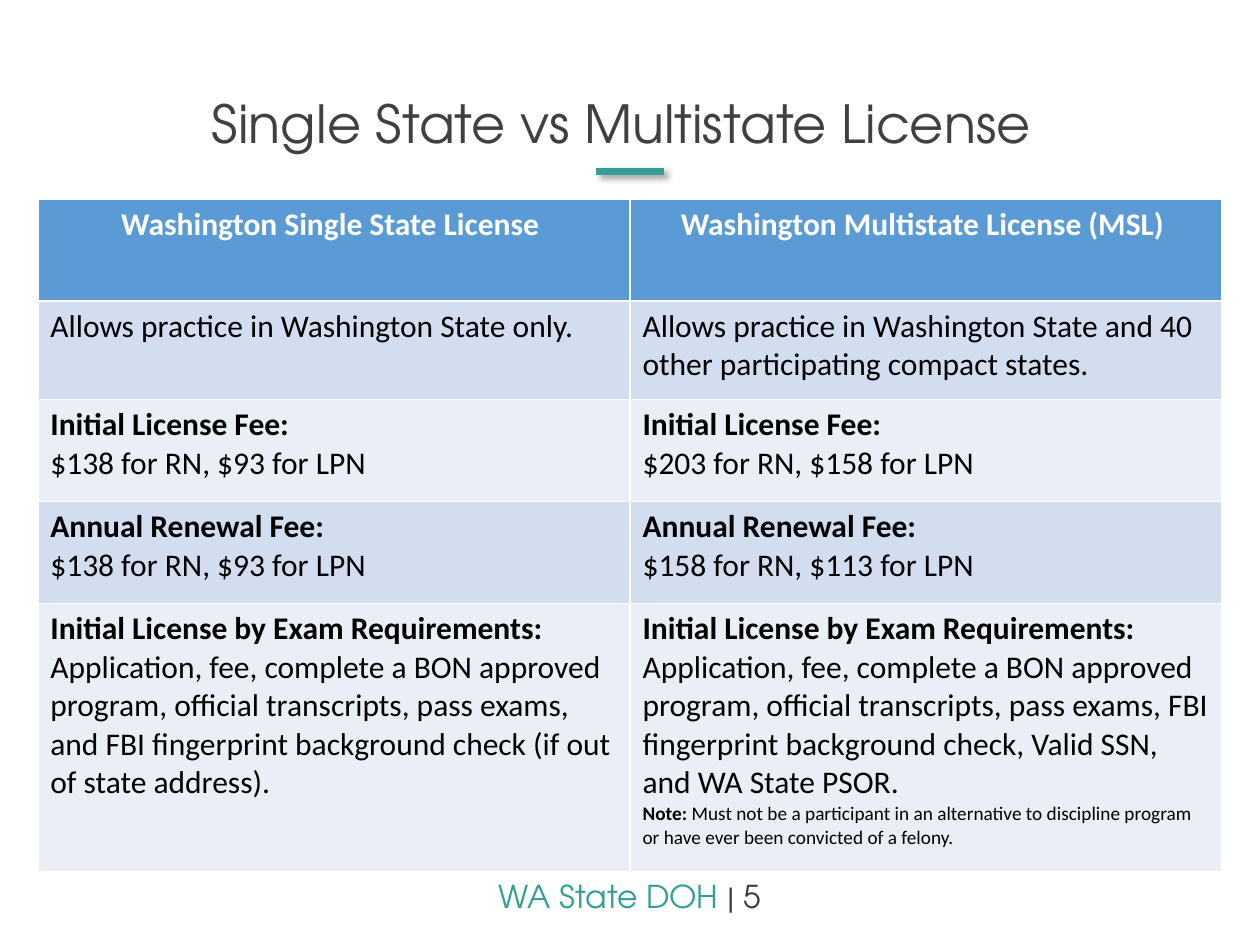
"""Build the slide that compares single state and multistate licenses."""
from lxml import etree
from pptx import Presentation
from pptx import util as u
from pptx.dml.color import RGBColor
from pptx.enum import shapes, text
from pptx.oxml import ns

WIDE, HIGH = u.Inches(10), u.Inches(7.5)
TEAL = RGBColor(0x34, 0x9D, 0x96)
GREY = RGBColor(0x40, 0x40, 0x40)
BLUE = RGBColor(0x5B, 0x9B, 0xD5)
BANDS = RGBColor(0xEA, 0xEF, 0xF7), RGBColor(0xD2, 0xDE, 0xEF)
WHITE = RGBColor(0xFF, 0xFF, 0xFF)
BLACK = RGBColor(0, 0, 0)
HEAD, BODY = "TeX Gyre Adventor", "Calibri"
ROWS = 0.81, 0.78, 0.81, 0.81, 2.13
FEE, RENEW = "Initial License Fee:", "Annual Renewal Fee:"
EXAM = "Initial License by Exam Requirements:"
BASE = "Application, fee, complete a BON approved program, official transcripts, pass exams, "
LOCAL = "$138 for RN, $93 for LPN"
NOTE = ("Must not be a participant in an alternative to discipline program "
        "or have ever been convicted of a felony.")
CELLS = [
    [("Washington Single State License ",), ("Washington Multistate License (MSL) ",)],
    [("Allows practice in Washington State only.",),
     ("Allows practice in Washington State and 40 other participating compact states.",)],
    [(FEE, LOCAL), (FEE, "$203 for RN, $158 for LPN")],
    [(RENEW, LOCAL), (RENEW, "$158 for RN, $113 for LPN")],
    [(EXAM, BASE + "and FBI fingerprint background check (if out of state address)."),
     (EXAM, BASE + "FBI fingerprint background check, Valid SSN, and WA State PSOR.")],
]


def style(font, name, size, color, bold=False):
    """Set the face, size, colour and weight of a font."""
    font.name, font.size, font.bold = name, u.Pt(size), bold
    font.color.rgb = color


def add_title(slide, words):
    """Place and fill the title."""
    title = slide.shapes.title
    title.left, title.top = u.Inches(-0.01), u.Inches(0.74)
    title.width, title.height = WIDE, u.Inches(0.53)
    frame = title.text_frame
    frame.text = words
    frame.vertical_anchor = text.MSO_ANCHOR.MIDDLE
    para = frame.paragraphs[0]
    para.alignment, para.line_spacing = text.PP_ALIGN.CENTER, 0.9
    style(para.font, HEAD, 30, GREY)


def add_rule(slide):
    """Draw the short shadowed line below the title."""
    half, top = u.Inches(0.27), u.Inches(1.36)
    mid = WIDE // 2
    rule = slide.shapes.add_connector(
        shapes.MSO_CONNECTOR.STRAIGHT, mid - half, top, mid + half, top)
    rule.line.color.rgb, rule.line.width = TEAL, u.Pt(4)
    props = rule.element.spPr
    effect = etree.SubElement(props, ns.qn("a:effectLst"))
    shade = etree.SubElement(effect, ns.qn("a:outerShdw"), blurRad=str(u.Pt(4)),
                             dist=str(u.Pt(3)), dir=str(45 * 60000), algn="tl")
    color = etree.SubElement(shade, ns.qn("a:srgbClr"), val="000000")
    etree.SubElement(color, ns.qn("a:alpha"), val="40000")


def add_foot(slide):
    """Write the centred footer."""
    box = slide.shapes.add_textbox(0, u.Inches(6.91), WIDE, u.Inches(0.4))
    box.text_frame.word_wrap = True
    para = box.text_frame.paragraphs[0]
    para.alignment = text.PP_ALIGN.CENTER
    for words, color in (("WA State DOH ", TEAL), ("| 5", GREY)):
        run = para.add_run()
        run.text = words
        style(run.font, HEAD, 18, color)


def fill_cell(cell, lines, row):
    """Write the lines of one cell and colour it by its row."""
    cell.fill.solid()
    cell.fill.fore_color.rgb = BANDS[row % 2] if row else BLUE
    cell.text_frame.text = "\n".join(lines)
    for spot, para in enumerate(cell.text_frame.paragraphs):
        bold = row == 0 or (spot == 0 and len(lines) > 1)
        style(para.font, BODY, 18, BLACK if row else WHITE, bold)
        if row == 0:
            para.alignment = text.PP_ALIGN.CENTER


def add_note(cell):
    """Append the small note to a cell."""
    para = cell.text_frame.add_paragraph()
    for words, bold in (("Note: ", True), (NOTE, False)):
        run = para.add_run()
        run.text = words
        style(run.font, BODY, 11, BLACK, bold)


def add_grid(slide):
    """Add the table of the two licenses."""
    table = slide.shapes.add_table(
        len(CELLS), 2, u.Inches(0.3), u.Inches(1.58),
        u.Inches(9.4), u.Inches(sum(ROWS))).table
    for row, (high, pair) in enumerate(zip(ROWS, CELLS)):
        table.rows[row].height = u.Inches(high)
        for col, lines in enumerate(pair):
            fill_cell(table.cell(row, col), lines, row)
    add_note(table.cell(len(CELLS) - 1, 1))


def main():
    """Build and save the slide."""
    deck = Presentation()
    deck.slide_width, deck.slide_height = WIDE, HIGH
    slide = deck.slides.add_slide(deck.slide_layouts[5])
    add_rule(slide)
    add_foot(slide)
    add_title(slide, "Single State vs Multistate License ")
    add_grid(slide)
    deck.save("out.pptx")


if __name__ == "__main__":
    main()
